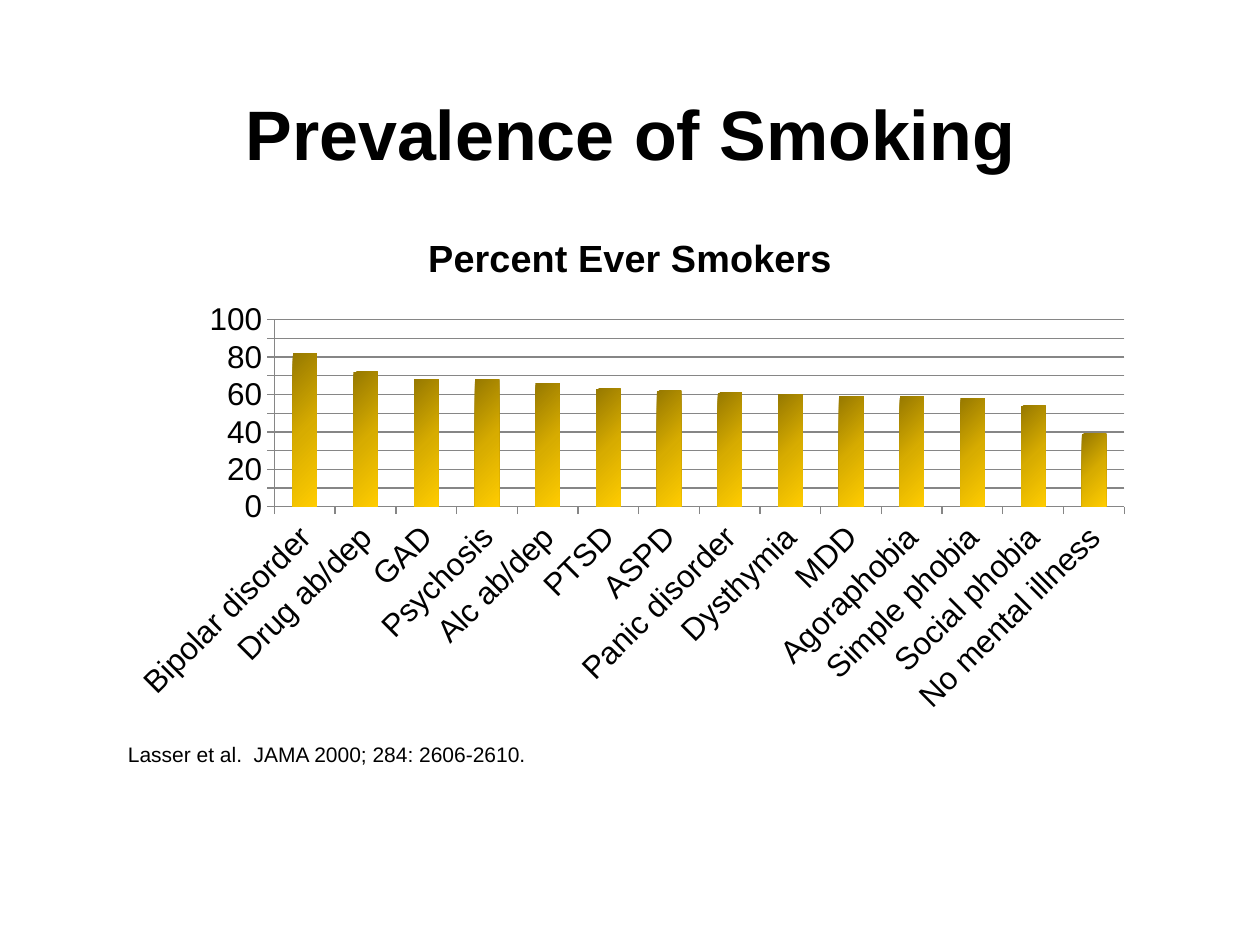
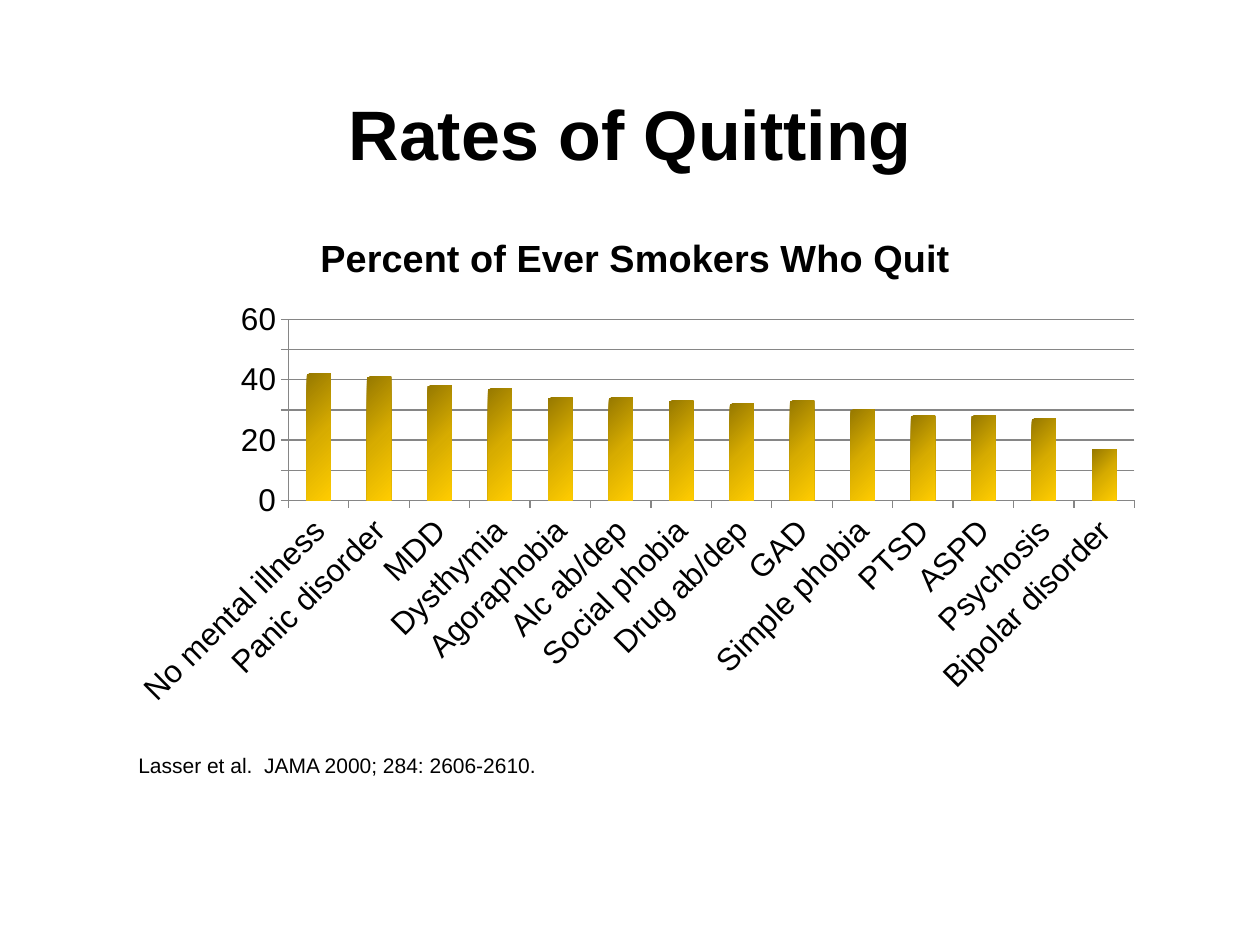
from copy import deepcopy

from pptx import Presentation
from pptx.chart.data import CategoryChartData
from pptx.dml.color import RGBColor
from pptx.enum.chart import XL_CHART_TYPE as ChartType, XL_TICK_MARK as TickMark
from pptx.enum.text import MSO_ANCHOR as Anchor, PP_ALIGN as Align
from pptx.oxml.ns import qn
from pptx.util import Cm, Pt

BLACK = RGBColor(0x00, 0x00, 0x00)
GRAY = RGBColor(0x86, 0x86, 0x86)
GOLD_STOPS = [
    (0, RGBColor(0x97, 0x79, 0x00)),
    (0.5, RGBColor(0xD7, 0xAC, 0x00)),
    (1, RGBColor(0xFF, 0xCC, 0x00)),
]
LEFT = 2.33
CITATION = "Lasser et al.  JAMA 2000; 284: 2606-2610."

EVER_SMOKERS = {
    "Bipolar disorder": 82, "Drug ab/dep": 72, "GAD": 68, "Psychosis": 68,
    "Alc ab/dep": 66, "PTSD": 63, "ASPD": 62, "Panic disorder": 61,
    "Dysthymia": 60, "MDD": 59, "Agoraphobia": 59, "Simple phobia": 58,
    "Social phobia": 54, "No mental illness": 39,
}
QUITTERS = {
    "No mental illness": 42, "Panic disorder": 41, "MDD": 38, "Dysthymia": 37,
    "Agoraphobia": 34, "Alc ab/dep": 34, "Social phobia": 33, "Drug ab/dep": 32,
    "GAD": 33, "Simple phobia": 30, "PTSD": 28, "ASPD": 28,
    "Psychosis": 27, "Bipolar disorder": 17,
}


class Deck:
    """Hold the shared style and the current slide."""

    font_name = "Arial"

    def __init__(self):
        self.presentation = Presentation()
        self.presentation.slide_width = Cm(25.4)
        self.presentation.slide_height = Cm(19.05)
        self.slide = None

    def style(self, font, size, bold=False):
        font.name = self.font_name
        font.size = Pt(size)
        font.bold = bold
        font.color.rgb = BLACK

    def text(self, text, box, size, bold=False, align=Align.LEFT, anchor=Anchor.TOP):
        shape = self.slide.shapes.add_textbox(*map(Cm, box))
        text_frame = shape.text_frame
        text_frame.word_wrap = True
        text_frame.vertical_anchor = anchor
        text_frame.text = text
        paragraph = text_frame.paragraphs[0]
        paragraph.alignment = align
        self.style(paragraph.runs[0].font, size, bold)

    def start_slide(self, title):
        self.slide = self.presentation.slides.add_slide(self.presentation.slide_layouts[6])
        self.text(title, (LEFT, 1.69, 20.75, 1.96), 40, True, Align.CENTER, Anchor.BOTTOM)

    def citation(self, left, top, width):
        self.text(CITATION, (left, top, width, 0.77), 12)

    def column_chart(self, title, percents, maximum, width, height):
        data = CategoryChartData()
        data.categories = list(percents)
        data.add_series("Series 1", list(percents.values()))
        chart = self.slide.shapes.add_chart(
            ChartType.COLUMN_CLUSTERED, Cm(LEFT), Cm(4.23), Cm(width), Cm(height), data
        ).chart
        self.style(chart.font, 18)
        chart.has_legend = False
        chart.has_title = True
        chart.chart_title.include_in_layout = False
        chart.chart_title.text_frame.text = title
        self.style(chart.chart_title.text_frame.paragraphs[0].runs[0].font, 21.6, True)

        plot = chart.plots[0]
        plot.gap_width = 150
        plot.vary_by_categories = False
        self.gold_fill(plot.series[0])
        self.axes(chart, maximum)

    def gold_fill(self, series):
        series.format.line.fill.background()
        fill = series.format.fill
        fill.gradient()
        fill.gradient_angle = 315
        stop_list = next(series._element.iter(qn("a:gsLst")))
        stop_list.append(deepcopy(stop_list[0]))
        for stop, (position, color) in zip(fill.gradient_stops, GOLD_STOPS):
            stop.position = position
            stop.color.rgb = color

    def axes(self, chart, maximum):
        value_axis, category_axis = chart.value_axis, chart.category_axis
        value_axis.minimum_scale = 0
        value_axis.maximum_scale = maximum
        value_axis.major_unit = 10
        value_axis.has_major_gridlines = True
        for axis in (value_axis, category_axis):
            axis.major_tick_mark = TickMark.OUTSIDE
            axis.minor_tick_mark = TickMark.NONE
            self.style(axis.tick_labels.font, 18)
        for part in (value_axis, category_axis, value_axis.major_gridlines):
            part.format.line.color.rgb = GRAY
            part.format.line.width = Pt(0.75)
        label_body = next(category_axis._element.iter(qn("a:bodyPr")))
        label_body.set("rot", "-2700000")
        label_body.set("vert", "horz")


def main():
    deck = Deck()

    deck.start_slide("Prevalence of Smoking")
    deck.column_chart("Percent Ever Smokers", EVER_SMOKERS, 100, 20.75, 10.37)
    deck.citation(LEFT, 14.83, 19.9)

    deck.start_slide("Rates of Quitting")
    deck.column_chart("Percent of Ever Smokers Who Quit", QUITTERS, 60, 20.96, 10.24)
    deck.citation(2.54, 15.04, 19.47)

    deck.presentation.save("out.pptx")


if __name__ == "__main__":
    main()
